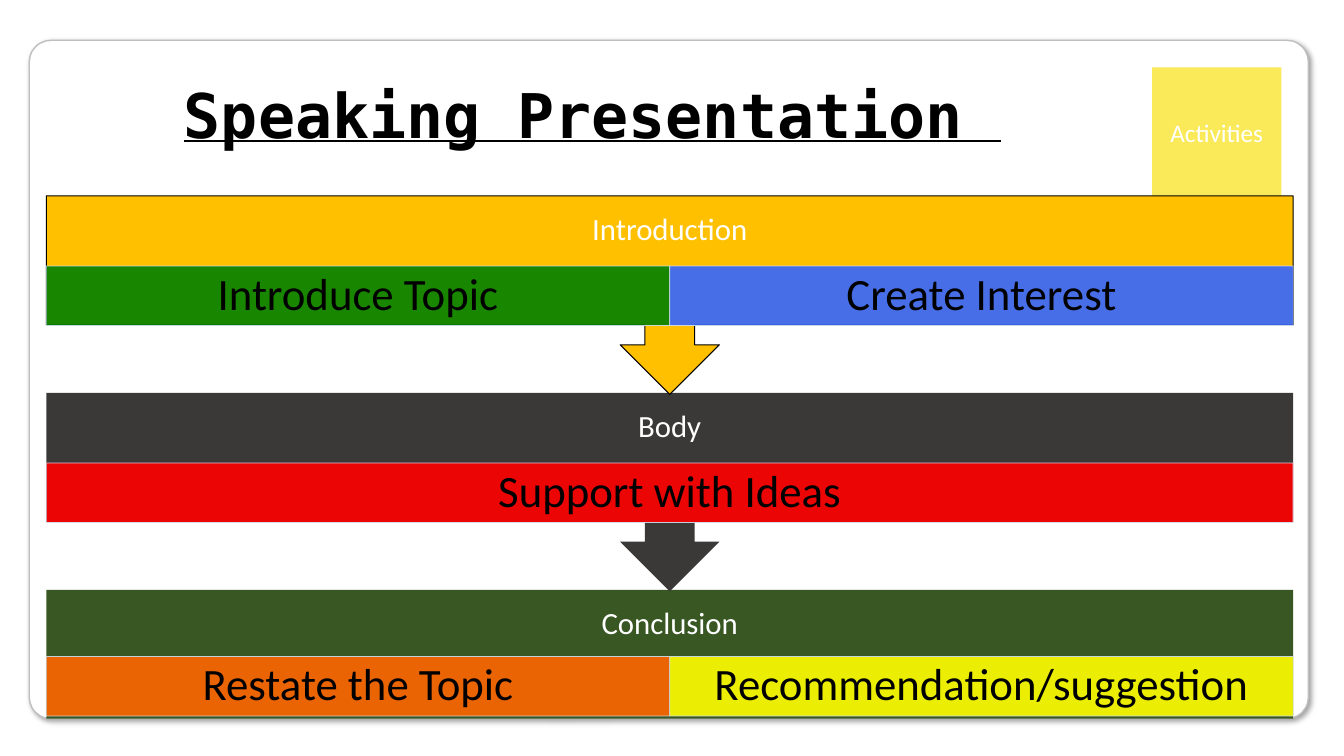
from lxml.etree import SubElement as Sub
from pptx import Presentation
from pptx.dml.color import RGBColor
from pptx.enum.shapes import MSO_SHAPE as Kind
from pptx.enum.text import MSO_ANCHOR as Anchor, PP_ALIGN as Align
from pptx.oxml.ns import qn
from pptx.util import Pt

SANS, MONO = "Calibri", "DejaVu Sans Mono"
BLACK, WHITE = "000000", "FFFFFF"
HEAD_H, CELL_H, STEP = 49.7, 42.5, 140.7


def paint(target, color):
    """Set a solid fill or a font colour from a hex string."""
    if hasattr(target, "solid"):
        target.solid()
        target.fore_color.rgb = RGBColor.from_string(color)
    else:
        target.color.rgb = RGBColor.from_string(color)


def write(shape, words, size, color, font=SANS, pad=(7.2, 3.6), gap=1.0):
    frame = shape.text_frame
    frame.word_wrap = True
    frame.vertical_anchor = Anchor.MIDDLE
    frame.margin_left = frame.margin_right = Pt(pad[0])
    frame.margin_top = frame.margin_bottom = Pt(pad[1])
    para = frame.paragraphs[0]
    para.alignment = Align.CENTER
    para.line_spacing = gap
    run = para.add_run()
    run.text = words
    run.font.name = font
    run.font.size = Pt(size)
    paint(run.font, color)
    return run


def block(slide, kind, box, fill, line=None, width=0.5):
    shape = slide.shapes.add_shape(kind, *map(Pt, box))
    shape.shadow.inherit = False
    paint(shape.fill, fill)
    if line:
        paint(shape.line.fill, line)
        shape.line.width = Pt(width)
    else:
        shape.line.fill.background()
    return shape


def fade(shape, percent):
    """Make the fill and line partly see-through."""
    for tint in shape.element.spPr.iter(qn("a:srgbClr")):
        Sub(tint, qn("a:alpha"), val=str(percent * 1000))


def panel(slide, box):
    shape = block(slide, Kind.ROUNDED_RECTANGLE, box, WHITE, "BFBFBF", 1)
    shape.adjustments[0] = 0.032
    # Soft shadow to the lower right
    effects = shape.element.spPr.find(qn("a:effectLst"))
    shade = Sub(effects, qn("a:outerShdw"), blurRad=str(Pt(4)),
                dist=str(Pt(3)), dir="2700000", algn="tl", rotWithShape="0")
    tint = Sub(shade, qn("a:srgbClr"), val=BLACK)
    Sub(tint, qn("a:alpha"), val="40000")


def badge(slide, box):
    shape = block(slide, Kind.RECTANGLE, box, "FAE959")
    write(shape, "Activities", 18, WHITE)


def title(slide, box):
    shape = slide.shapes.title
    shape.left, shape.top, shape.width, shape.height = map(Pt, box)
    run = write(shape, "Speaking Presentation ", 44, BLACK, MONO, gap=0.9)
    run.font.bold = run.font.underline = True


def stage(slide, box, name, fill, cells, line=None, drop=50.1, last=False):
    left, top, width, height = box
    # Backdrop: a callout pointing to the next stage, or a plain bar
    kind = Kind.RECTANGLE if last else Kind.UP_ARROW_CALLOUT
    back = block(slide, kind, box, fill, line, 0.75)
    if not last:
        back.rotation = 180
    # Heading
    head = slide.shapes.add_textbox(*map(Pt, (left, top, width, HEAD_H)))
    write(head, name, 22, WHITE, pad=(12.3, 12.3), gap=0.9)
    # Equal cells under the heading
    wide = width / len(cells)
    for i, (words, color) in enumerate(cells):
        cell = block(slide, Kind.RECTANGLE,
                     (left + i * wide, top + drop, wide, CELL_H),
                     color, "D2DEEF")
        fade(cell, 90)
        write(cell, words, 32, BLACK, pad=(18, 2.9), gap=0.9)


def flow(slide, box):
    left, top, width, height = box
    tall = height - 2 * STEP
    # Later stages lie behind earlier ones
    stage(slide, (left, top + 2 * STEP, width, tall), "Conclusion", "385723",
          [("Restate the Topic", "FF6600"),
           ("Recommendation/suggestion", "FFFF00")], drop=47.7, last=True)
    stage(slide, (left, top + STEP, width, 141.8), "Body", "3B3838",
          [("Support with Ideas", "FF0000")])
    stage(slide, (left, top, width, 141.8), "Introduction", "FFC000",
          [("Introduce Topic", "008000"), ("Create Interest", "3366FF")],
          line=BLACK)


def main():
    deck = Presentation()
    deck.slide_width, deck.slide_height = Pt(960), Pt(540)
    slide = deck.slides.add_slide(deck.slide_layouts[5])
    panel(slide, (20.9, 28.8, 913.7, 484.6))
    badge(slide, (823, 48.2, 92.2, 92.2))
    title(slide, (33.1, 28.8, 779.8, 111.6))
    # Bring the title in front of the panel
    tree = slide.shapes.element
    tree.append(slide.shapes.title.element)
    flow(slide, (33.1, 139.9, 890.6, 373.5))
    deck.save("out.pptx")


if __name__ == "__main__":
    main()
